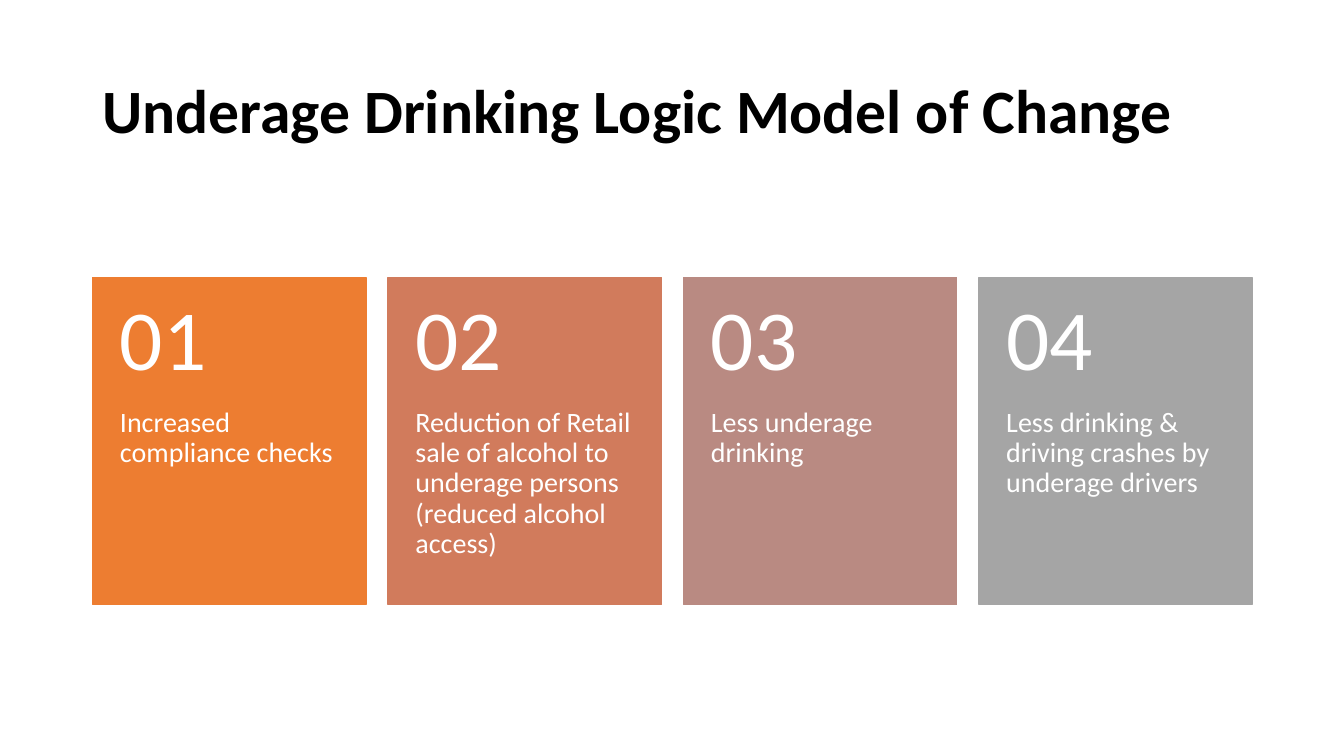
from pptx import Presentation
from pptx.dml.color import RGBColor
from pptx.enum.shapes import MSO_SHAPE
from pptx.enum.text import MSO_ANCHOR
from pptx.util import Inches, Pt

RECTANGLE = MSO_SHAPE.RECTANGLE
TOP = MSO_ANCHOR.TOP
MIDDLE = MSO_ANCHOR.MIDDLE

BLACK = RGBColor(0x00, 0x00, 0x00)
WHITE = RGBColor(0xFF, 0xFF, 0xFF)
ORANGE = RGBColor(0xED, 0x7D, 0x31)
TERRACOTTA = RGBColor(0xD1, 0x7B, 0x5C)
DUSTY_ROSE = RGBColor(0xB9, 0x8A, 0x82)
GRAY = RGBColor(0xA5, 0xA5, 0xA5)

STEPS = [
    ("Increased compliance checks", ORANGE),
    ("Reduction of Retail sale of alcohol to underage persons "
     "(reduced alcohol access)", TERRACOTTA),
    ("Less underage drinking", DUSTY_ROSE),
    ("Less drinking & driving crashes by underage drivers", GRAY),
]

LEFT = 0.92
CARD_TOP = 2.75
CARD_WIDTH = 2.71
CARD_HEIGHT = 3.25
CARD_PITCH = 2.93
NUMBER_HEIGHT = 1.3


class SlideBuilder:
    font = "Calibri"
    line_spacing = 0.9

    def __init__(self, page):
        self.page = page

    def text(self, words, area, size, color, insets, anchor=TOP, bold=False):
        box = self.page.shapes.add_textbox(*map(Inches, area))
        frame = box.text_frame
        frame.text = words
        frame.word_wrap = True
        frame.vertical_anchor = anchor
        (frame.margin_left, frame.margin_top,
         frame.margin_right, frame.margin_bottom) = map(Inches, insets)
        para = frame.paragraphs[0]
        para.line_spacing = self.line_spacing
        span = para.runs[0]
        span.font.name = self.font
        span.font.size = Pt(size)
        span.font.bold = bold
        span.font.color.rgb = color

    def panel(self, area, color):
        box = self.page.shapes.add_shape(RECTANGLE, *map(Inches, area))
        box.shadow.inherit = False
        box.fill.solid()
        box.fill.fore_color.rgb = color
        box.line.color.rgb = color
        box.line.width = Pt(1)

    def step(self, index, words, color):
        left = LEFT + index * CARD_PITCH
        self.panel((left, CARD_TOP, CARD_WIDTH, CARD_HEIGHT), color)
        self.text(words,
                  (left, CARD_TOP + NUMBER_HEIGHT, CARD_WIDTH,
                   CARD_HEIGHT - NUMBER_HEIGHT),
                  20, WHITE, (0.27, 0, 0.27, 0.36))
        self.text(f"{index + 1:02d}",
                  (left, CARD_TOP, CARD_WIDTH, NUMBER_HEIGHT),
                  61, WHITE, (0.27, 0.18, 0.27, 0.18), MIDDLE)


def main():
    deck = Presentation()
    deck.slide_width = Inches(13.33)
    deck.slide_height = Inches(7.5)
    builder = SlideBuilder(deck.slides.add_slide(deck.slide_layouts[6]))
    builder.text("Underage Drinking Logic Model of Change",
                 (LEFT, 0.4, 11.5, 1.45), 44, BLACK,
                 (0.1, 0.05, 0.1, 0.05), MIDDLE, bold=True)
    for index, (words, color) in enumerate(STEPS):
        builder.step(index, words, color)
    deck.save("out.pptx")


if __name__ == "__main__":
    main()
